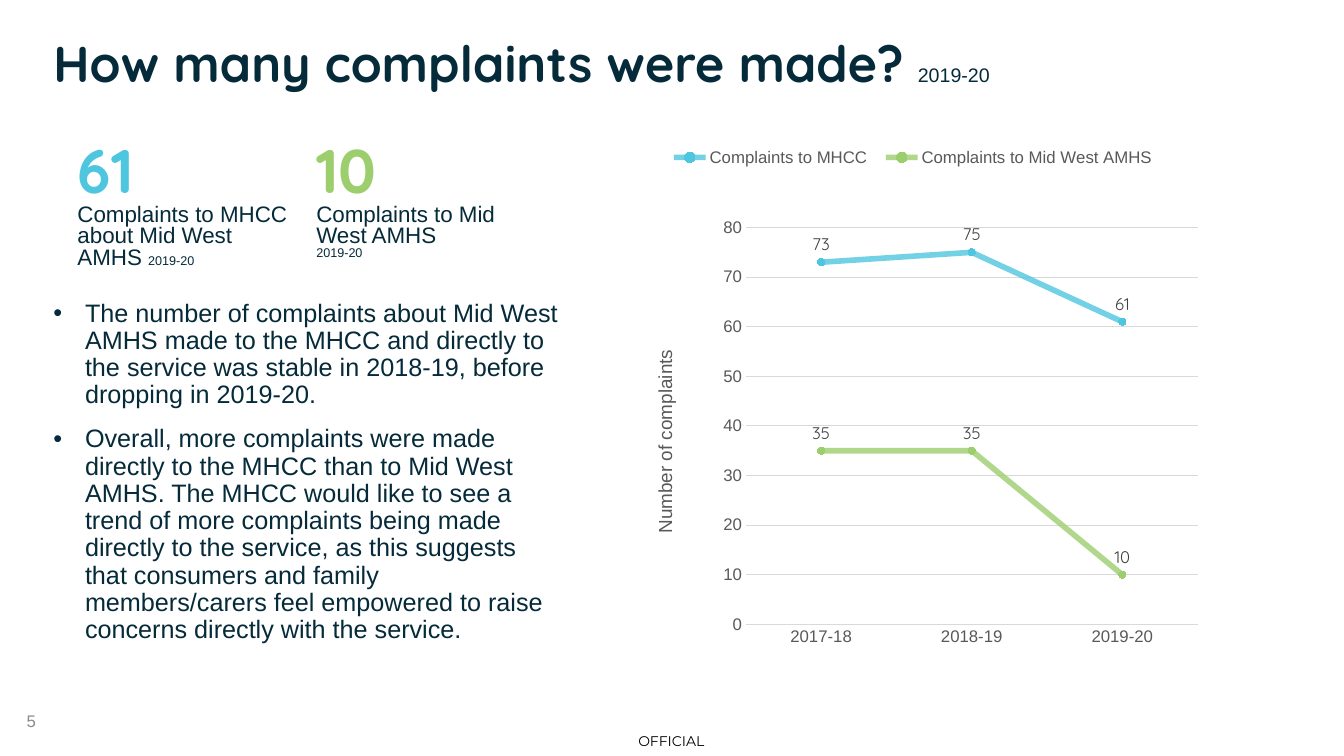
from copy import deepcopy

from lxml.etree import SubElement
from pptx import Presentation
from pptx.chart.data import CategoryChartData as ChartData
from pptx.dml.color import RGBColor as Color
from pptx.enum.chart import XL_CHART_TYPE as ChartType
from pptx.enum.chart import XL_LABEL_POSITION as LabelPosition
from pptx.enum.chart import XL_LEGEND_POSITION as LegendPosition
from pptx.enum.chart import XL_MARKER_STYLE as MarkerStyle
from pptx.enum.chart import XL_TICK_MARK as TickMark
from pptx.enum.text import MSO_ANCHOR as Anchor
from pptx.enum.text import MSO_AUTO_SIZE as AutoSize
from pptx.enum.text import PP_ALIGN as Align
from pptx.oxml import parse_xml
from pptx.oxml.ns import nsdecls, qn
from pptx.util import Pt

TITLE = [("How many complaints were made? ", "title"), ("2019-20", "title_year")]
STATS = [
    ("61", "mhcc_number", "Complaints to MHCC about Mid West AMHS ", False),
    ("10", "amhs_number", "Complaints to Mid West AMHS ", True),
]
YEAR = "2019-20"
BULLETS = [
    "The number of complaints about Mid West AMHS made to the MHCC and directly to "
    "the service was stable in 2018-19, before dropping in 2019-20.",
    "Overall, more complaints were made directly to the MHCC than to Mid West AMHS. "
    "The MHCC would like to see a trend of more complaints being made directly to the "
    "service, as this suggests that consumers and family members/carers feel empowered "
    "to raise concerns directly with the service.",
]
YEARS = ["2017-18", "2018-19", "2019-20"]
SERIES = [
    ("Complaints to MHCC", (73, 75, 61), "sky"),
    ("Complaints to Mid West AMHS", (35, 35, 10), "leaf"),
]
AXIS_TITLE = "Number of complaints"
FOOTERS = [
    ("OFFICIAL", "marking", (443, 518, 73, 22), Align.CENTER, 0),
    ("5", "page_number", (12, 500, 216, 29), Align.LEFT, 7.2),
]

THEME = {
    "colors": {
        "ink": "052A39", "sky": "4FC6DF", "leaf": "9DCE6E", "grid": "D9D9D9",
        "axis": "595959", "label": "404040", "gray": "8C8C8C", "black": "000000",
    },
    "text": {
        "title": ("Quicksand", 36, True, "ink"),
        "title_year": ("Arial", 14, False, "ink"),
        "mhcc_number": ("Quicksand", 44, True, "sky"),
        "amhs_number": ("Quicksand", 44, True, "leaf"),
        "stat": ("Arial", 16, False, "ink"),
        "stat_year": ("Arial", 9, False, "ink"),
        "body": ("Arial", 18, False, "ink"),
        "chart": ("Arial", 10, False, "black"),
        "axis": ("Arial", 12, False, "axis"),
        "axis_title": ("Arial", 13.5, False, "axis"),
        "data_label": ("Quicksand", 12, False, "label"),
        "marking": ("Montserrat", 10, False, "black"),
        "page_number": ("Arial", 12, False, "gray"),
    },
}
STAT_LEFT, STAT_TOP, STAT_WIDTH, STAT_HEIGHT = 48.25, 100.8, 170.6, 89.3
BULLET_INDENT = 22.5


def assign(target, values):
    for name, value in values.items():
        setattr(target, name, value)


def color(name):
    return Color.from_string(THEME["colors"][name])


def style(font, name):
    face, size, bold, ink = THEME["text"][name]
    assign(font, {"name": face, "size": Pt(size), "bold": bold})
    font.color.rgb = color(ink)


def place(shape, left, top, width, height):
    assign(shape, {"left": Pt(left), "top": Pt(top), "width": Pt(width), "height": Pt(height)})


def setup(frame, anchor=Anchor.TOP):
    assign(frame, {"word_wrap": True, "auto_size": AutoSize.NONE, "vertical_anchor": anchor})


def write(para, text, name):
    span = para.add_run()
    span.text = text
    style(span.font, name)
    return span


def draw_line(line, name, width):
    line.color.rgb = color(name)
    line.width = Pt(width)


def set_layout(parent, box, before, inner=False):
    for old in parent.findall(qn("c:layout")):
        parent.remove(old)
    layout = parse_xml(f"<c:layout {nsdecls('c')}><c:manualLayout/></c:layout>")
    manual = layout[0]
    if inner:
        SubElement(manual, qn("c:layoutTarget")).set("val", "inner")
    for axis in "xy":
        SubElement(manual, qn(f"c:{axis}Mode")).set("val", "edge")
    for axis, value in zip("xywh", box):
        SubElement(manual, qn(f"c:{axis}")).set("val", str(value))
    parent.insert(before, layout)


def add_title(page):
    box = page.shapes.title
    place(box, 31, 24, 894, 67)
    setup(box.text_frame)
    para = box.text_frame.paragraphs[0]
    assign(para, {"alignment": Align.LEFT, "line_spacing": 0.9})
    for text, name in TITLE:
        write(para, text, name)


def add_bullets(page):
    box = page.placeholders[1]
    place(box, 31, 211, 376, 305)
    frame = box.text_frame
    setup(frame)
    for index, text in enumerate(BULLETS):
        para = frame.add_paragraph() if index else frame.paragraphs[0]
        props = para._p.get_or_add_pPr()
        props.set("marL", str(Pt(BULLET_INDENT)))
        props.set("indent", str(-Pt(BULLET_INDENT)))
        SubElement(props, qn("a:buChar")).set("char", "•")
        assign(para, {"line_spacing": 0.9, "space_before": Pt(6 if index else 0),
                      "space_after": Pt(6)})
        write(para, text, "body")


def add_stats(page):
    for index, (number, name, caption, year_below) in enumerate(STATS):
        left = STAT_LEFT + index * STAT_WIDTH
        box = page.shapes.add_textbox(Pt(left), Pt(STAT_TOP), Pt(STAT_WIDTH), Pt(STAT_HEIGHT))
        frame = box.text_frame
        setup(frame)
        write(frame.paragraphs[0], number, name)
        para = frame.add_paragraph()
        span = write(para, caption, "stat")
        if year_below:
            para.add_line_break()
            para._p[-1].append(deepcopy(span._r.rPr))
        write(para, YEAR, "stat_year")
        for line in frame.paragraphs:
            line.line_spacing = 0.8


def add_footers(page):
    for text, name, area, alignment, inset in FOOTERS:
        box = page.shapes.add_textbox(*map(Pt, area))
        setup(box.text_frame, Anchor.MIDDLE)
        assign(box.text_frame, {"margin_left": Pt(inset), "margin_right": Pt(inset),
                                "margin_top": 0, "margin_bottom": 0})
        para = box.text_frame.paragraphs[0]
        para.alignment = alignment
        write(para, text, name)


def add_complaints_chart(page):
    data = ChartData(number_format="General")
    data.categories = YEARS
    for name, values, _ in SERIES:
        data.add_series(name, values)
    chart = page.shapes.add_chart(
        ChartType.LINE_MARKERS, Pt(460), Pt(91), Pt(409), Pt(391), data).chart
    assign(chart, {"has_title": False, "has_legend": True})
    style(chart.font, "chart")
    assign(chart.legend, {"position": LegendPosition.BOTTOM, "include_in_layout": False})
    style(chart.legend.font, "axis")
    set_layout(chart.legend._element, (0.03, 0.03, 0.88, 0.05), 1)
    set_layout(chart._chartSpace.chart.plotArea, (0.178, 0.183, 0.789, 0.725), 0, True)

    years, counts = chart.category_axis, chart.value_axis
    for axis in (years, counts):
        assign(axis, {"major_tick_mark": TickMark.NONE, "minor_tick_mark": TickMark.NONE})
        style(axis.tick_labels.font, "axis")
    draw_line(years.format.line, "grid", 0.75)
    counts.format.line.fill.background()
    assign(counts, {"minimum_scale": 0, "maximum_scale": 80, "major_unit": 10,
                    "has_major_gridlines": True})
    draw_line(counts.major_gridlines.format.line, "grid", 0.75)
    write(counts.axis_title.text_frame.paragraphs[0], AXIS_TITLE, "axis_title")
    set_layout(counts.axis_title._element, (0.01, 0.4), 1)

    for series, (_, _, ink) in zip(chart.plots[0].series, SERIES):
        series.smooth = False
        draw_line(series.format.line, ink, 4)
        shade = series._element.spPr.find(".//" + qn("a:srgbClr"))
        SubElement(shade, qn("a:alpha")).set("val", "80000")
        assign(series.marker, {"style": MarkerStyle.CIRCLE, "size": 5})
        series.marker.format.fill.solid()
        series.marker.format.fill.fore_color.rgb = color(ink)
        draw_line(series.marker.format.line, ink, 0.75)
        labels = series.data_labels
        assign(labels, {"show_value": True, "position": LabelPosition.ABOVE})
        style(labels.font, "data_label")


def main():
    deck = Presentation()
    assign(deck, {"slide_width": Pt(960), "slide_height": Pt(540)})
    page = deck.slides.add_slide(deck.slide_layouts[1])
    for add_part in (add_title, add_bullets, add_stats, add_complaints_chart, add_footers):
        add_part(page)
    deck.save("out.pptx")


if __name__ == "__main__":
    main()
